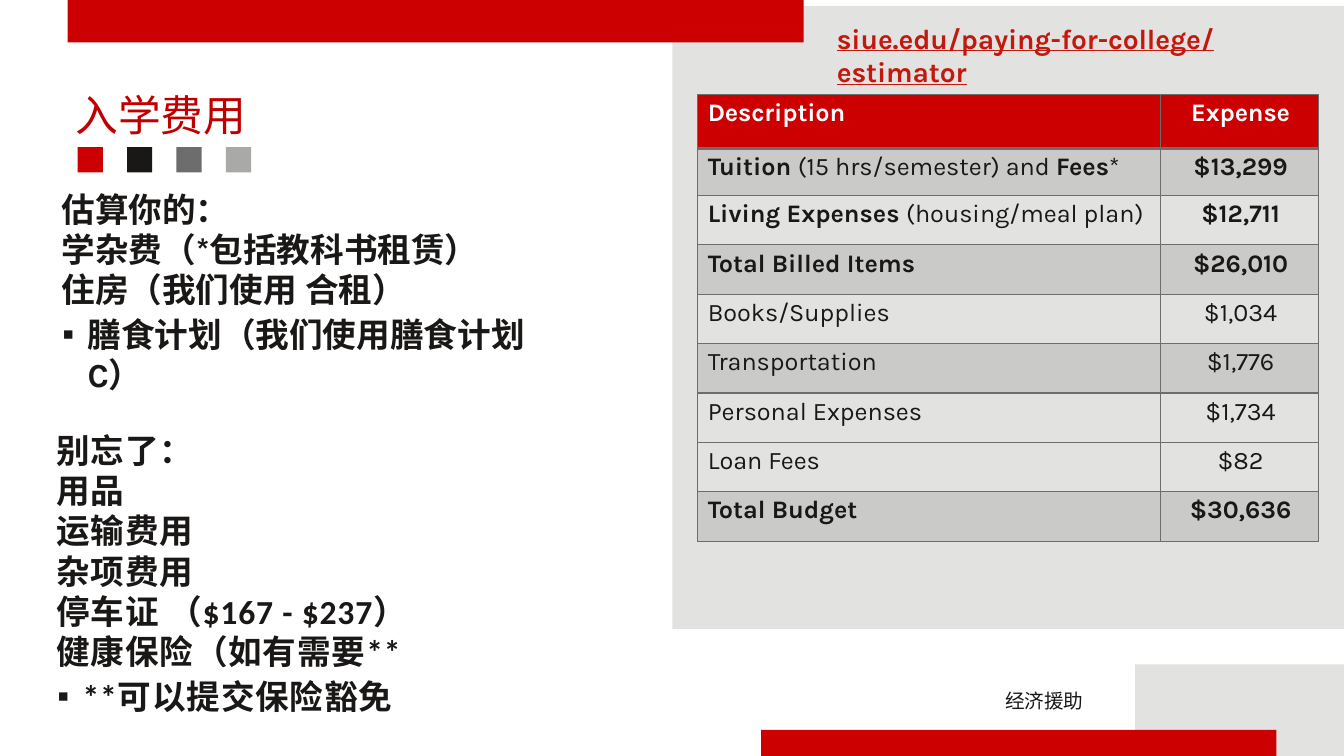
from dataclasses import dataclass, replace

from lxml.etree import SubElement
from pptx import Presentation
from pptx.dml.color import RGBColor
from pptx.enum.shapes import MSO_SHAPE
from pptx.enum.text import MSO_ANCHOR, MSO_AUTO_SIZE, PP_ALIGN
from pptx.oxml.ns import qn
from pptx.slide import Slide
from pptx.util import Inches, Pt


@dataclass(frozen=True)
class TextStyle:
    font: str
    size: float
    color: str
    bold: bool = False
    underline: bool = False
    spacing: float = 0


@dataclass(frozen=True)
class Theme:
    red: str = "CC0000"
    black: str = "1A1817"
    gray: str = "6C6D6C"
    silver: str = "A9AAA8"
    pale: str = "E2E3E1"
    title: TextStyle = TextStyle("Montserrat", 30.5, "C00000")
    estimate: TextStyle = TextStyle("Karla", 24, "1A1817", bold=True)
    reminder: TextStyle = TextStyle("Calibri", 24, "1A1817", bold=True, spacing=0.6)
    link: TextStyle = TextStyle("Karla", 20, "C2180E", True, True, -0.1)
    footer: TextStyle = TextStyle("Arial", 14, "1A1817", spacing=-0.1)
    header: TextStyle = TextStyle("Karla", 18, "FFFFFF", bold=True, spacing=-0.1)
    cell: TextStyle = TextStyle("Karla", 18, "1A1817")


@dataclass(frozen=True)
class Area:
    left: float
    top: float
    width: float
    height: float

    def lengths(self) -> tuple:
        return tuple(Inches(n) for n in (self.left, self.top, self.width, self.height))


@dataclass(frozen=True)
class Block:
    area: Area
    color: str


@dataclass(frozen=True)
class Expense:
    label: tuple  # pieces of text, alternately bold and regular
    amount: str
    shaded: bool = False


THEME = Theme()

SQUARE_COLORS = (THEME.red, THEME.black, THEME.gray, THEME.silver)
BLOCKS = [
    Block(Area(6.67, 0.06, 6.67, 6.18), THEME.pale),
    Block(Area(11.26, 6.59, 2.07, 0.91), THEME.pale),
    Block(Area(7.55, 7.24, 5.11, 0.26), THEME.red),
    Block(Area(0.67, 0, 7.3, 0.42), THEME.red),
] + [
    Block(Area(0.77 + 0.49 * i, 1.46, 0.25, 0.25), color)
    for i, color in enumerate(SQUARE_COLORS)
]

ESTIMATES = ["估算你的：", "学杂费（*包括教科书租赁）", "住房（我们使用 合租）",
             "膳食计划（我们使用膳食计划 C）"]
REMINDERS = ["别忘了：", "用品", "运输费用", "杂项费用", "停车证 （$167 - $237）",
             "健康保险（如有需要**", "**可以提交保险豁免"]

EXPENSES = [
    Expense(("Tuition ", "(15 hrs/semester) and ", "Fees", "*"), "$13,299", True),
    Expense(("Living Expenses ", "(housing/meal plan)"), "$12,711"),
    Expense(("Total Billed Items",), "$26,010", True),
    Expense(("", "Books/Supplies"), "$1,034"),
    Expense(("", "Transportation"), "$1,776", True),
    Expense(("", "Personal Expenses"), "$1,734"),
    Expense(("", "Loan Fees"), "$82"),
    Expense(("Total Budget",), "$30,636", True),
]


def add_span(para, text: str, style: TextStyle) -> None:
    span = para.add_run()
    span.text = text
    font = span.font
    font.name, font.size = style.font, Pt(style.size)
    font.bold, font.underline = style.bold, style.underline
    font.color.rgb = RGBColor.from_string(style.color)
    properties = font._element
    properties.set("spc", str(round(style.spacing * 100)))
    SubElement(properties, qn("a:ea")).set("typeface", style.font)


def prepare_frame(box, area: Area, inset: float):
    box.left, box.top, box.width, box.height = area.lengths()
    frame = box.text_frame
    frame.word_wrap = True
    frame.auto_size = MSO_AUTO_SIZE.NONE
    frame.vertical_anchor = MSO_ANCHOR.TOP
    frame.margin_left = frame.margin_right = frame.margin_bottom = 0
    frame.margin_top = Inches(inset)
    return frame


def write_line(box, area: Area, text: str, style: TextStyle) -> None:
    para = prepare_frame(box, area, 0.02).paragraphs[0]
    para.alignment = PP_ALIGN.LEFT
    add_span(para, text, style)


def write_list(box, area: Area, lines: list, style: TextStyle) -> None:
    """Plain lines, closed by one bulleted line."""
    frame = prepare_frame(box, area, 0.04)
    for i, line in enumerate(lines):
        para = frame.paragraphs[0] if i == 0 else frame.add_paragraph()
        bulleted = i == len(lines) - 1
        properties = para._p.get_or_add_pPr()
        properties.set("marL", str(Inches(0.26 if bulleted else 0)))
        properties.set("indent", str(Inches(-0.25 if bulleted else 0)))
        if bulleted:
            SubElement(properties, qn("a:buChar")).set("char", "▪")
        else:
            SubElement(properties, qn("a:buNone"))
        para.space_before = Pt(3 if bulleted else 0)
        add_span(para, line, style)


def draw_block(page: Slide, block: Block) -> None:
    shape = page.shapes.add_shape(MSO_SHAPE.RECTANGLE, *block.area.lengths())
    shape.shadow.inherit = False
    shape.fill.solid()
    shape.fill.fore_color.rgb = RGBColor.from_string(block.color)
    shape.line.fill.background()


def format_cell(cell, row: int, column: int, color: str, alpha: int = 100) -> None:
    cell.margin_left = Inches(0.1 if column == 0 else 0.02)
    cell.margin_right = cell.margin_bottom = 0
    cell.margin_top = Inches(0.04)
    # Borders, heavier under the header
    properties = cell._tc.get_or_add_tcPr()
    for side in ("lnL", "lnR", "lnT", "lnB"):
        heavy = (row, side) in ((0, "lnB"), (1, "lnT"))
        line = SubElement(properties, qn(f"a:{side}"), w=str(Pt(2.25 if heavy else 1)))
        SubElement(SubElement(line, qn("a:solidFill")), qn("a:srgbClr")).set("val", THEME.gray)
    # Fill
    cell.fill.solid()
    cell.fill.fore_color.rgb = RGBColor.from_string(color)
    if alpha < 100:
        tint = properties.find(qn("a:solidFill")).find(qn("a:srgbClr"))
        SubElement(tint, qn("a:alpha")).set("val", str(alpha * 1000))


def draw_expenses(page: Slide, area: Area) -> None:
    table = page.shapes.add_table(len(EXPENSES) + 1, 2, *area.lengths()).table
    table.horz_banding = False
    for column, width in enumerate((4.59, 1.57)):
        table.columns[column].width = Inches(width)
    for row, height in enumerate([0.53, 0.47] + [0.49] * 7):
        table.rows[row].height = Inches(height)

    # Header
    for column, heading in enumerate(("Description", "Expense")):
        cell = table.cell(0, column)
        format_cell(cell, 0, column, THEME.red)
        add_span(cell.text_frame.paragraphs[0], heading, THEME.header)

    # Expenses
    for row, expense in enumerate(EXPENSES, start=1):
        label, amount = table.cell(row, 0), table.cell(row, 1)
        fill = (THEME.gray, 20) if expense.shaded else (THEME.pale, 100)
        for column, cell in enumerate((label, amount)):
            format_cell(cell, row, column, *fill)
        for i, piece in enumerate(expense.label):
            if piece:
                style = replace(THEME.cell, bold=i % 2 == 0)
                add_span(label.text_frame.paragraphs[0], piece, style)
        strong = replace(THEME.cell, bold=bool(expense.label[0]))
        add_span(amount.text_frame.paragraphs[0], expense.amount, strong)

    for row in range(len(EXPENSES) + 1):
        table.cell(row, 1).text_frame.paragraphs[0].alignment = PP_ALIGN.CENTER


def main() -> None:
    deck = Presentation()
    deck.slide_width, deck.slide_height = Inches(13.33), Inches(7.5)
    page = deck.slides.add_slide(deck.slide_layouts.get_by_name("Two Content"))

    # Background blocks and squares
    for block in BLOCKS:
        draw_block(page, block)

    # Title and lists
    title, estimates, reminders = page.placeholders
    write_line(title, Area(0.75, 0.86, 5.53, 0.54), "入学费用", THEME.title)
    write_list(estimates, Area(0.61, 1.83, 5.14, 2.19), ESTIMATES, THEME.estimate)
    write_list(reminders, Area(0.56, 4.22, 5.79, 3.12), REMINDERS, THEME.reminder)

    # Expense table, link and footer
    draw_expenses(page, Area(6.92, 0.94, 6.16, 4.41))
    for area, text, style in (
        (Area(8.3, 0.19, 4.28, 0.7), "siue.edu/paying-for-college/estimator", THEME.link),
        (Area(9.97, 6.81, 0.96, 0.25), "经济援助", THEME.footer),
    ):
        write_line(page.shapes.add_textbox(*area.lengths()), area, text, style)

    deck.save("out.pptx")


if __name__ == "__main__":
    main()
